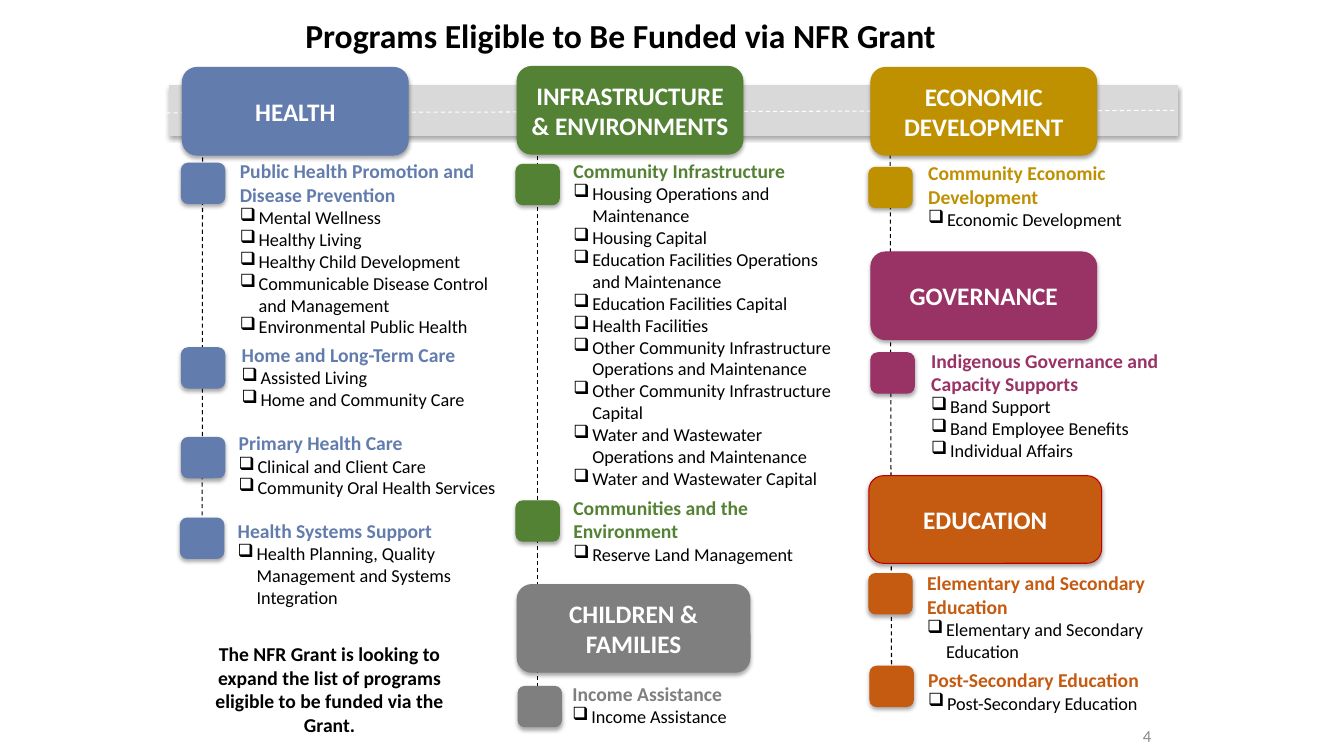
"""Build the slide of programs eligible for the NFR Grant."""
from dataclasses import dataclass

from lxml.etree import SubElement
from pptx import Presentation
from pptx.dml.color import RGBColor
from pptx.enum.dml import MSO_LINE
from pptx.enum.shapes import MSO_CONNECTOR, MSO_SHAPE
from pptx.enum.text import MSO_ANCHOR, MSO_AUTO_SIZE, PP_ALIGN
from pptx.oxml.ns import qn
from pptx.util import Pt


@dataclass(frozen=True)
class Theme:
    """Colours, font and type sizes of the slide."""

    font: str = "Calibri"
    health: str = "627CAD"
    infrastructure: str = "548235"
    economy: str = "BF9000"
    governance: str = "993366"
    education: str = "C55A11"
    education_edge: str = "C00000"
    families: str = "7F7F7F"
    road: str = "D9D9D9"
    white: str = "FFFFFF"
    black: str = "000000"
    page_number: str = "8C8C8C"
    title_size: float = 24
    header_size: float = 18
    section_size: float = 14
    item_size: float = 13
    page_number_size: float = 12
    line_width: float = 0.75


THEME = Theme()
MARKER_WIDTH, MARKER_HEIGHT = 31, 28.8
HEADER_HEIGHT = 62.6
BULLET_INDENT = 13.5

HEADERS = [
    ("HEALTH", 130.3, 48.2, 161.3, THEME.health, THEME.health),
    ("INFRASTRUCTURE & ENVIRONMENTS", 369.4, 47.5, 161.3, THEME.infrastructure, THEME.infrastructure),
    ("ECONOMIC DEVELOPMENT", 622.1, 48.2, 161.3, THEME.economy, THEME.economy),
    ("GOVERNANCE", 622.1, 180, 161.3, THEME.governance, THEME.governance),
    ("EDUCATION", 620.6, 339.8, 166.3, THEME.education, THEME.education_edge),
    ("CHILDREN & FAMILIES", 369.4, 417.6, 166.3, THEME.families, THEME.families),
]

SECTIONS = [
    (THEME.health, (129.6, 116.6), (164.2, 110.2, 192.2, 135.4),
     "Public Health Promotion and Disease Prevention",
     ["Mental Wellness", "Healthy Living", "Healthy Child Development",
      "Communicable Disease Control and Management", "Environmental Public Health"]),
    (THEME.health, (129.6, 248.4), (165.6, 241.2, 192.2, 55.4),
     "Home and Long-Term Care", ["Assisted Living", "Home and Community Care"]),
    (THEME.health, (129.6, 312.5), (163.4, 304.6, 212.4, 55.4),
     "Primary Health Care", ["Clinical and Client Care", "Community Oral Health Services"]),
    (THEME.health, (128.9, 370.1), (162.7, 367.2, 212.4, 71.3),
     "Health Systems Support",
     ["Health Planning, Quality Management and Systems Integration"]),
    (THEME.infrastructure, (368.6, 117.4), (402.5, 110.2, 200.9, 259.2),
     "Community Infrastructure",
     ["Housing Operations and Maintenance", "Housing Capital",
      "Education Facilities Operations and Maintenance", "Education Facilities Capital",
      "Health Facilities", "Other Community Infrastructure Operations and Maintenance",
      "Other Community Infrastructure Capital",
      "Water and Wastewater Operations and Maintenance", "Water and Wastewater Capital"]),
    (THEME.infrastructure, (368.6, 357.8), (402.5, 350.6, 192.2, 56.9),
     "Communities and the Environment", ["Reserve Land Management"]),
    (THEME.economy, (620.6, 119.5), (655.9, 111.6, 221, 56.9),
     "Community Economic Development", ["Economic Development"]),
    (THEME.governance, (622.1, 252), (658.1, 245.5, 190, 88.6),
     "Indigenous Governance and Capacity Supports",
     ["Band Support", "Band Employee Benefits", "Individual Affairs"]),
    (THEME.education, (620.6, 409.7), (655.2, 404.6, 190, 72.7),
     "Elementary and Secondary Education", ["Elementary and Secondary Education"]),
    (THEME.education, (621.4, 475.9), (655.9, 473.8, 190, 40.3),
     "Post-Secondary Education", ["Post-Secondary Education"]),
    (THEME.families, (370.1, 490.3), (401.8, 483.8, 155.5, 40.3),
     "Income Assistance", ["Income Assistance"]),
]


def style_font(paragraph, size, colour, bold=False):
    """Set the font of a whole paragraph."""
    font = paragraph.font
    font.name, font.size, font.bold = THEME.font, Pt(size), bold
    font.color.rgb = RGBColor.from_string(colour)


def add_shadow(shape):
    """Give a shape a soft shadow below it."""
    shape.shadow.inherit = False
    effects = shape.element.spPr.find(qn("a:effectLst"))
    shadow = SubElement(effects, qn("a:outerShdw"), blurRad=str(Pt(3.1)), dist=str(Pt(1.8)),
                        dir="5400000", rotWithShape="0")
    colour = SubElement(shadow, qn("a:srgbClr"), val=THEME.black)
    SubElement(colour, qn("a:alpha"), val="35000")


def add_block(slide, kind, box, fill, edge):
    """Add a filled shape with a thin edge and a shadow."""
    shape = slide.shapes.add_shape(kind, *map(Pt, box))
    shape.fill.solid()
    shape.fill.fore_color.rgb = RGBColor.from_string(fill)
    shape.line.color.rgb = RGBColor.from_string(edge)
    shape.line.width = Pt(THEME.line_width)
    add_shadow(shape)
    return shape


def add_header(slide, text, left, top, width, fill, edge):
    """Add a rounded program heading."""
    box = (left, top, width, HEADER_HEIGHT)
    frame = add_block(slide, MSO_SHAPE.ROUNDED_RECTANGLE, box, fill, edge).text_frame
    frame.word_wrap = True
    frame.vertical_anchor = MSO_ANCHOR.MIDDLE
    paragraph = frame.paragraphs[0]
    paragraph.text = text
    paragraph.alignment = PP_ALIGN.CENTER
    style_font(paragraph, THEME.header_size, THEME.white, bold=True)


def add_dashed_line(slide, start, end, colour):
    """Add a thin dashed line without a shadow."""
    line = slide.shapes.add_connector(MSO_CONNECTOR.STRAIGHT, *map(Pt, start + end))
    line.line.color.rgb = RGBColor.from_string(colour)
    line.line.width = Pt(THEME.line_width)
    line.line.dash_style = MSO_LINE.DASH
    SubElement(line.element.spPr, qn("a:effectLst"))
    return line


def add_text(slide, box, text, size, colour, bold=True, alignment=PP_ALIGN.LEFT):
    """Add a wrapping text box and return its frame."""
    frame = slide.shapes.add_textbox(*map(Pt, box)).text_frame
    frame.word_wrap = True
    frame.auto_size = MSO_AUTO_SIZE.SHAPE_TO_FIT_TEXT
    paragraph = frame.paragraphs[0]
    paragraph.text = text
    paragraph.alignment = alignment
    style_font(paragraph, size, colour, bold)
    return frame


def add_bullet(frame, text):
    """Append a checkbox item with a hanging indent."""
    paragraph = frame.add_paragraph()
    paragraph.text = text
    properties = paragraph._p.get_or_add_pPr()
    properties.set("marL", str(Pt(BULLET_INDENT)))
    properties.set("indent", str(-Pt(BULLET_INDENT)))
    SubElement(properties, qn("a:buChar"), char="❑")
    style_font(paragraph, THEME.item_size, THEME.black)


def add_section(slide, colour, marker_corner, text_box, title, items):
    """Add a marker with its titled list and return the marker."""
    marker_box = (*marker_corner, MARKER_WIDTH, MARKER_HEIGHT)
    marker = add_block(slide, MSO_SHAPE.ROUNDED_RECTANGLE, marker_box, colour, colour)
    frame = add_text(slide, text_box, title, THEME.section_size, colour)
    for item in items:
        add_bullet(frame, item)
    return marker


def main():
    """Build and save the slide."""
    presentation = Presentation()
    presentation.slide_width, presentation.slide_height = Pt(960), Pt(540)
    slide = presentation.slides.add_slide(presentation.slide_layouts[6])

    add_dashed_line(slide, (383.8, 111.6), (383.8, 493.9), THEME.black)
    health_line = add_dashed_line(slide, (144.7, 107.3), (144.4, 398.9), THEME.black)
    economy_line = add_dashed_line(slide, (635.8, 100.1), (636.9, 504.7), THEME.black)
    road = add_block(slide, MSO_SHAPE.RECTANGLE, (121, 61.2, 720, 35.3), THEME.road, THEME.road)
    road_line = add_dashed_line(slide, (118.8, 80.6), (841, 78.8), THEME.white)
    road_line.end_connect(road, 3)

    for header in HEADERS:
        add_header(slide, *header)
    markers = {section[3]: add_section(slide, *section) for section in SECTIONS}
    health_line.end_connect(markers["Health Systems Support"], 2)
    economy_line.end_connect(markers["Post-Secondary Education"], 2)

    add_text(slide, (211, 7.2, 480.2, 36), "Programs Eligible to Be Funded via NFR Grant",
             THEME.title_size, THEME.black)
    add_text(slide, (132.5, 455, 205.9, 74.9),
             "The NFR Grant is looking to expand the list of programs "
             "eligible to be funded via the Grant.",
             THEME.section_size, THEME.black, alignment=PP_ALIGN.CENTER)
    page_number = add_text(slide, (661.7, 511.2, 167.8, 28.8), "4", THEME.page_number_size,
                           THEME.page_number, bold=False, alignment=PP_ALIGN.RIGHT)
    page_number.auto_size = MSO_AUTO_SIZE.NONE
    page_number.vertical_anchor = MSO_ANCHOR.MIDDLE
    presentation.save("out.pptx")


if __name__ == "__main__":
    main()
